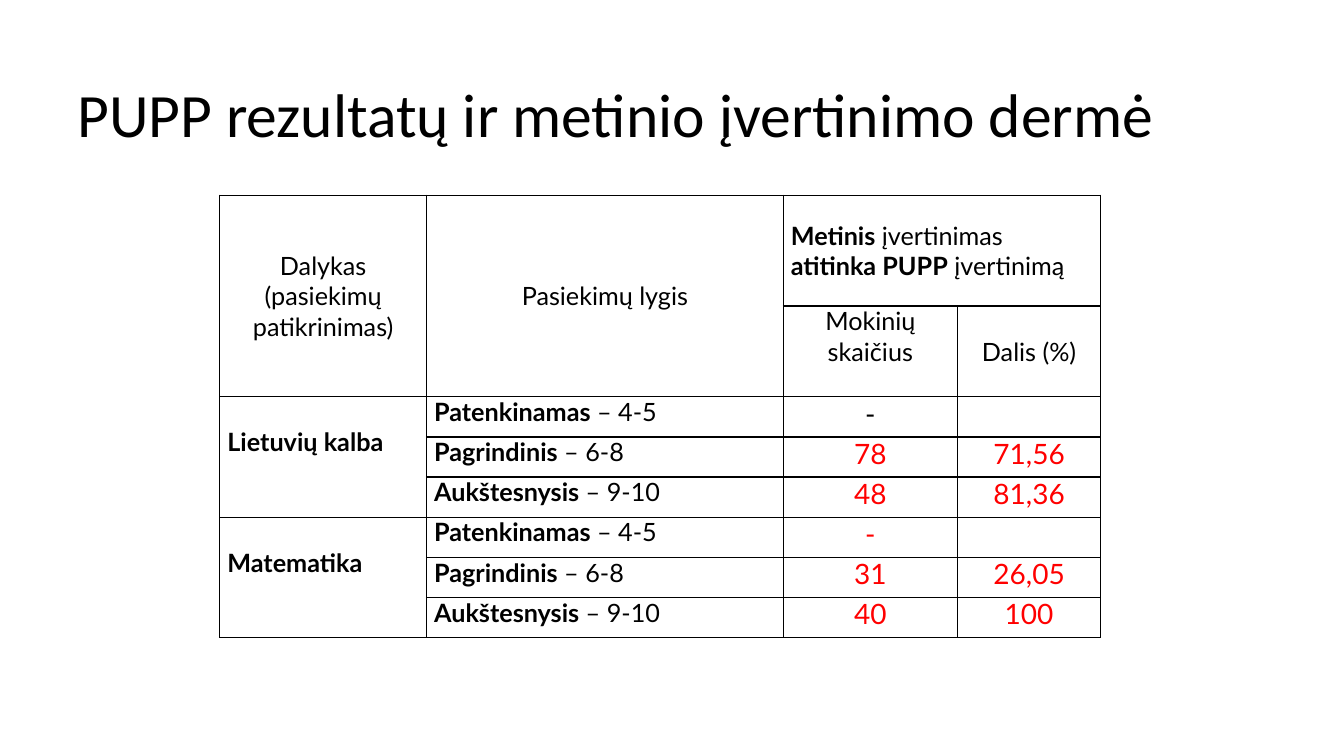
from dataclasses import dataclass

from lxml.etree import SubElement
from pptx import Presentation
from pptx.dml.color import RGBColor
from pptx.enum.text import MSO_ANCHOR as Anchor, PP_ALIGN as Align
from pptx.oxml.ns import qn
from pptx.util import Cm, Pt


@dataclass(frozen=True)
class Theme:
    title_font: str = "Calibri"
    table_font: str = "Lato"
    title_size: int = 44
    label_size: int = 18
    value_size: int = 20
    border_width: int = 1
    black: str = "000000"
    red: str = "FF0000"
    white: str = "FFFFFF"


THEME = Theme()
COLUMN_WIDTHS = (5.21, 8.99, 4.39, 3.61)
HEADER_HEIGHTS = (2.79, 2.29)
LEVEL_HEIGHT = 1.01
ONE_LINE = 0.76  # height of one label line, used to lower a text in its cell

LEVELS = (("Patenkinamas", " – 4-5"), ("Pagrindinis", " – 6-8"), ("Aukštesnysis", " – 9-10"))
# Subject, colour of its first count, and (count, share) for each level
SUBJECTS = (
    ("Lietuvių kalba", THEME.black, (("-", ""), ("78", "71,56"), ("48", "81,36"))),
    ("Matematika", THEME.red, (("-", ""), ("31", "26,05"), ("40", "100"))),
)


def style_run(run, font_name, size, color=THEME.black, bold=False):
    run.font.name = font_name
    run.font.size = Pt(size)
    run.font.bold = bold
    run.font.color.rgb = RGBColor.from_string(color)


def add_title(slide, text):
    title = slide.shapes.add_textbox(Cm(1.7), Cm(1.06), Cm(30.48), Cm(3.82))
    frame = title.text_frame
    frame.word_wrap = True
    frame.vertical_anchor = Anchor.MIDDLE
    frame.text = text
    paragraph = frame.paragraphs[0]
    paragraph.line_spacing = 0.9
    style_run(paragraph.runs[0], THEME.title_font, THEME.title_size)


def frame_cell(cell):
    """Give a cell a white fill, thin borders and narrow margins."""
    properties = cell._tc.get_or_add_tcPr()
    for side in ("a:lnL", "a:lnR", "a:lnT", "a:lnB"):
        border = SubElement(properties, qn(side), w=str(Pt(THEME.border_width)))
        SubElement(SubElement(border, qn("a:solidFill")), qn("a:srgbClr"), val=THEME.black)
    cell.fill.solid()
    cell.fill.fore_color.rgb = RGBColor.from_string(THEME.white)
    cell.margin_left = cell.margin_right = Cm(0.19)
    cell.margin_top = cell.margin_bottom = Cm(0)


def write_cell(cell, *parts, size=THEME.label_size, color=THEME.black,
               align=Align.LEFT, anchor=Anchor.TOP, lowered=0):
    """Write (text, bold) parts into a cell, lowered by a length in cm."""
    cell.vertical_anchor = anchor
    cell.margin_top = Cm(lowered)
    paragraph = cell.text_frame.paragraphs[0]
    paragraph.alignment = align
    for text, bold in parts:
        run = paragraph.add_run()
        run.text = text
        style_run(run, THEME.table_font, size, color, bold)


def add_grid(slide):
    heights = HEADER_HEIGHTS + (LEVEL_HEIGHT,) * (len(SUBJECTS) * len(LEVELS))
    grid = slide.shapes.add_table(
        len(heights), len(COLUMN_WIDTHS), Cm(5.54), Cm(4.92),
        Cm(sum(COLUMN_WIDTHS)), Cm(sum(heights))).table
    grid.first_row = grid.horz_banding = False
    for column, width in zip(grid.columns, COLUMN_WIDTHS):
        column.width = Cm(width)
    for row, height in zip(grid.rows, heights):
        row.height = Cm(height)
    for cell in grid.iter_cells():
        frame_cell(cell)
    return grid


def write_header(grid):
    for column, heading in enumerate(("Dalykas (pasiekimų patikrinimas)", "Pasiekimų lygis")):
        grid.cell(0, column).merge(grid.cell(1, column))
        write_cell(grid.cell(0, column), (heading, False), align=Align.CENTER, anchor=Anchor.MIDDLE)
    grid.cell(0, 2).merge(grid.cell(0, 3))
    write_cell(grid.cell(0, 2), ("Metinis", True), (" įvertinimas ", False),
               ("atitinka PUPP", True), (" įvertinimą", False), anchor=Anchor.MIDDLE)
    write_cell(grid.cell(1, 2), ("Mokinių skaičius", False), align=Align.CENTER)
    write_cell(grid.cell(1, 3), ("Dalis (%)", False), align=Align.CENTER, lowered=ONE_LINE)


def write_subject(grid, top, subject, first_color, results):
    grid.cell(top, 0).merge(grid.cell(top + len(LEVELS) - 1, 0))
    write_cell(grid.cell(top, 0), (subject, True), lowered=ONE_LINE)
    for row, ((level, marks), values) in enumerate(zip(LEVELS, results), start=top):
        write_cell(grid.cell(row, 1), (level, True), (marks, False))
        color = first_color if row == top else THEME.red
        for column, value in enumerate(values, start=2):
            if value:
                write_cell(grid.cell(row, column), (value, False), size=THEME.value_size,
                           color=color, align=Align.CENTER)


def main():
    deck = Presentation()
    deck.slide_width, deck.slide_height = Cm(33.87), Cm(19.05)
    slide = deck.slides.add_slide(deck.slide_layouts[6])
    add_title(slide, "PUPP rezultatų ir metinio įvertinimo dermė")
    grid = add_grid(slide)
    write_header(grid)
    for index, subject in enumerate(SUBJECTS):
        write_subject(grid, len(HEADER_HEIGHTS) + index * len(LEVELS), *subject)
    deck.save("out.pptx")


if __name__ == "__main__":
    main()
